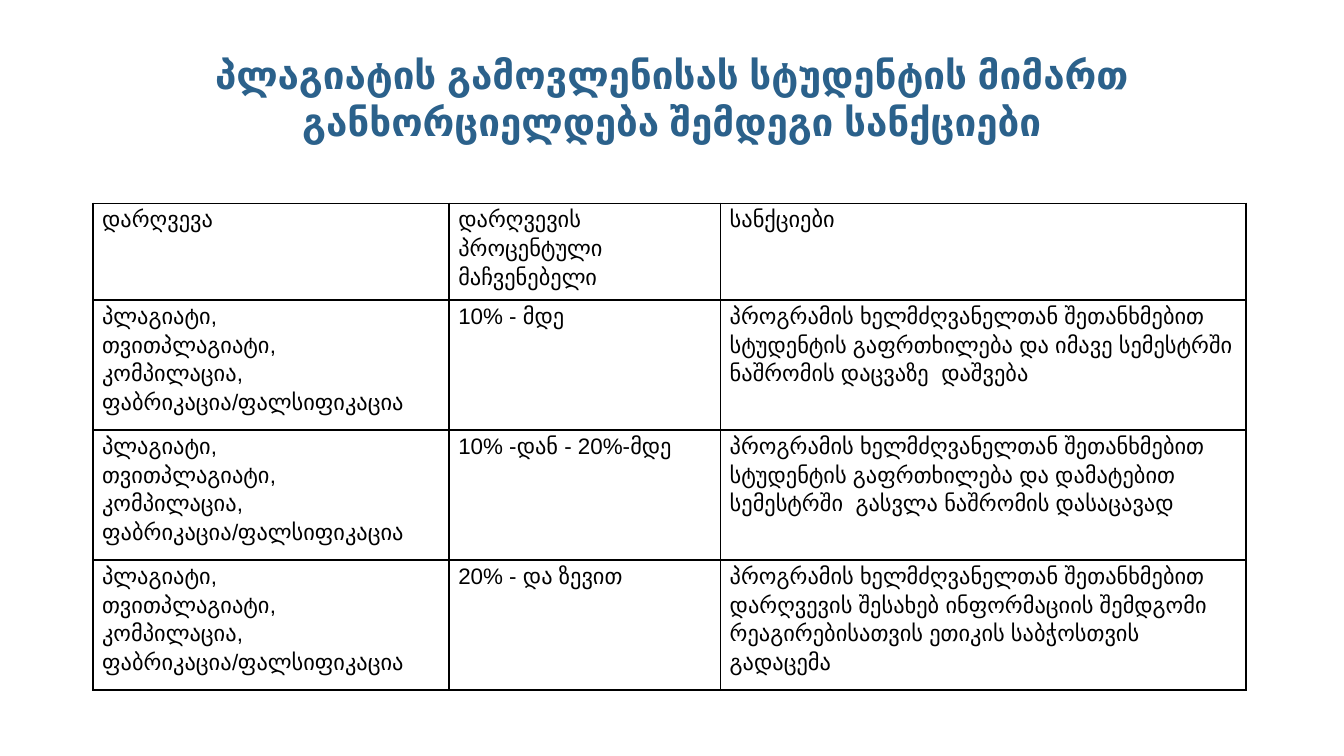
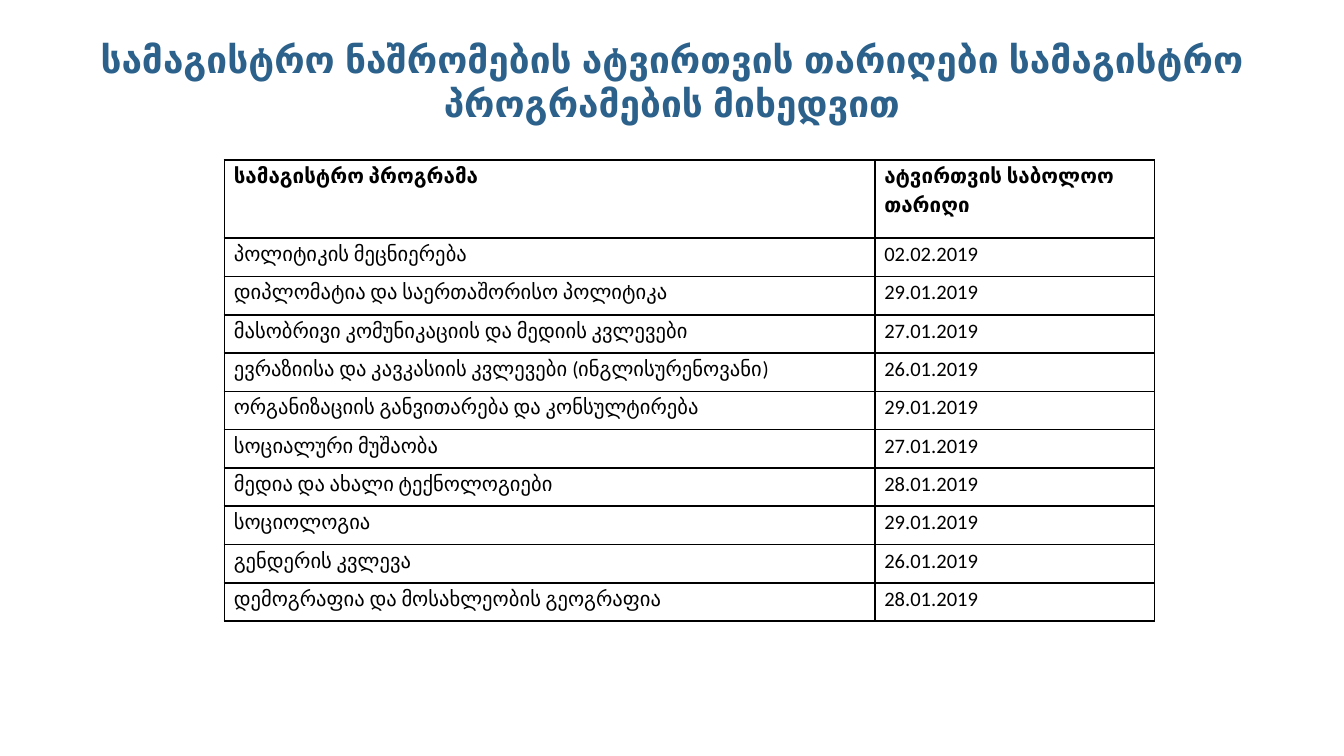
from dataclasses import dataclass

from lxml.etree import SubElement
from pptx import Presentation
from pptx.dml.color import RGBColor
from pptx.enum.text import MSO_ANCHOR, MSO_AUTO_SIZE, PP_ALIGN
from pptx.oxml.ns import qn
from pptx.util import Inches, Pt

GRID = 100  # columns across and rows down the slide
TITLE_ONLY = 5


@dataclass(frozen=True)
class Theme:
    title_color: str = "2B618B"
    text_color: str = "000000"
    border_color: str = "000000"
    background: str = "FFFFFF"
    title_font: str = "Arial"
    border_width: float = 1
    line_spacing: float = 1.15
    title_inset: float = 0.1
    cell_inset: float = 0.07


def write(frame, text, font, size, color, bold=False, align=PP_ALIGN.LEFT,
          spacing=None, insets=(0, 0)):
    """Fill a text frame, one paragraph per line; insets are (side, top and bottom)."""
    for index, line in enumerate(text.split("\n")):
        paragraph = frame.add_paragraph() if index else frame.paragraphs[0]
        paragraph.alignment = align
        if spacing:
            paragraph.line_spacing = spacing
        run = paragraph.add_run()
        run.text = line
        run.font.name = font
        run.font.size = Pt(size)
        run.font.bold = bold
        run.font.color.rgb = RGBColor.from_string(color)
    side, end = (Inches(inset) for inset in insets)
    frame.margin_left = frame.margin_right = side
    frame.margin_top = frame.margin_bottom = end


class Deck:
    def __init__(self, theme):
        self.theme = theme
        self.presentation = Presentation()
        self.presentation.slide_width = Inches(10)
        self.presentation.slide_height = Inches(10) * 9 // 16
        self.slide = None

    def columns(self, count):
        return round(self.presentation.slide_width * count / GRID)

    def rows(self, count):
        return round(self.presentation.slide_height * count / GRID)

    def add_slide(self):
        layout = self.presentation.slide_layouts[TITLE_ONLY]
        self.slide = self.presentation.slides.add_slide(layout)
        fill = self.slide.background.fill
        fill.solid()
        fill.fore_color.rgb = RGBColor.from_string(self.theme.background)

    def title(self, text, height, size):
        title = self.slide.shapes.title
        title.left, title.top = self.columns(5), self.rows(4.1)
        title.width, title.height = self.columns(90), self.rows(height)
        frame = title.text_frame
        frame.word_wrap = True
        frame.auto_size = MSO_AUTO_SIZE.NONE
        frame.vertical_anchor = MSO_ANCHOR.BOTTOM
        inset = self.theme.title_inset
        write(frame, text, self.theme.title_font, size, self.theme.title_color,
              bold=True, align=PP_ALIGN.CENTER, insets=(inset, inset))

    def border(self, cell):
        properties = cell._tc.get_or_add_tcPr()
        for index, side in enumerate(("lnL", "lnR", "lnT", "lnB")):
            line = SubElement(properties, qn(f"a:{side}"), w=str(Pt(self.theme.border_width)))
            fill = SubElement(line, qn("a:solidFill"))
            SubElement(fill, qn("a:srgbClr"), val=self.theme.border_color)
            properties.insert(index, line)

    def table(self, records, left, top, widths, header_height, row_height,
              font, size, bold_header=False):
        heights = [header_height] + [row_height] * (len(records) - 1)
        table = self.slide.shapes.add_table(
            len(records), len(widths), self.columns(left), self.rows(top),
            self.columns(sum(widths)), self.rows(sum(heights))).table
        table.first_row = table.horz_banding = False
        for column, width in zip(table.columns, widths):
            column.width = self.columns(width)
        for row, height in zip(table.rows, heights):
            row.height = self.rows(height)
        for row_index, record in enumerate(records):
            for column_index, text in enumerate(record):
                cell = table.cell(row_index, column_index)
                cell.fill.background()
                self.border(cell)
                write(cell.text_frame, text, font, size, self.theme.text_color,
                      bold=bold_header and row_index == 0,
                      spacing=self.theme.line_spacing)
                cell.margin_left = cell.margin_right = Inches(self.theme.cell_inset)
                cell.margin_top = cell.margin_bottom = 0
                cell.vertical_anchor = MSO_ANCHOR.TOP


VIOLATIONS = "პლაგიატი,\nთვითპლაგიატი,\nკომპილაცია,\nფაბრიკაცია/ფალსიფიკაცია"
AGREED = "პროგრამის ხელმძღვანელთან შეთანხმებით"
WARNING = f"{AGREED} სტუდენტის გაფრთხილება და"

SANCTIONS = [
    ("დარღვევა", "დარღვევის პროცენტული მაჩვენებელი", "სანქციები"),
    (VIOLATIONS, "10% - მდე",
     f"{WARNING} იმავე სემესტრში ნაშრომის დაცვაზე  დაშვება"),
    (VIOLATIONS, "10% -დან - 20%-მდე",
     f"{WARNING} დამატებით სემესტრში  გასვლა ნაშრომის დასაცავად"),
    (VIOLATIONS, "20% - და ზევით",
     f"{AGREED} დარღვევის შესახებ ინფორმაციის შემდგომი "
     "რეაგირებისათვის ეთიკის საბჭოსთვის გადაცემა"),
]

UPLOAD_DATES = [
    ("სამაგისტრო პროგრამა", "ატვირთვის საბოლოო თარიღი"),
    ("პოლიტიკის მეცნიერება", "02.02.2019"),
    ("დიპლომატია და საერთაშორისო პოლიტიკა", "29.01.2019"),
    ("მასობრივი კომუნიკაციის და მედიის კვლევები", "27.01.2019"),
    ("ევრაზიისა და კავკასიის კვლევები (ინგლისურენოვანი)", "26.01.2019"),
    ("ორგანიზაციის განვითარება და კონსულტირება", "29.01.2019"),
    ("სოციალური მუშაობა", "27.01.2019"),
    ("მედია და ახალი ტექნოლოგიები", "28.01.2019"),
    ("სოციოლოგია", "29.01.2019"),
    ("გენდერის კვლევა", "26.01.2019"),
    ("დემოგრაფია და მოსახლეობის გეოგრაფია", "28.01.2019"),
]


def main():
    deck = Deck(Theme())

    deck.add_slide()
    deck.title("პლაგიატის გამოვლენისას სტუდენტის მიმართ განხორციელდება შემდეგი სანქციები",
               height=16.7, size=20.7)
    deck.table(SANCTIONS, left=6.9, top=26.9, widths=(26.5, 20.2, 39.1),
               header_height=12.8, row_height=17.2, font="Arial", size=12)

    deck.add_slide()
    deck.title("სამაგისტრო ნაშრომების ატვირთვის თარიღები სამაგისტრო პროგრამების მიხედვით",
               height=14.2, size=19.8)
    deck.table(UPLOAD_DATES, left=16.7, top=21.2, widths=(48.4, 20.8),
               header_height=10.3, row_height=5.07, font="Calibri", size=11,
               bold_header=True)

    deck.presentation.save("out.pptx")


if __name__ == "__main__":
    main()
